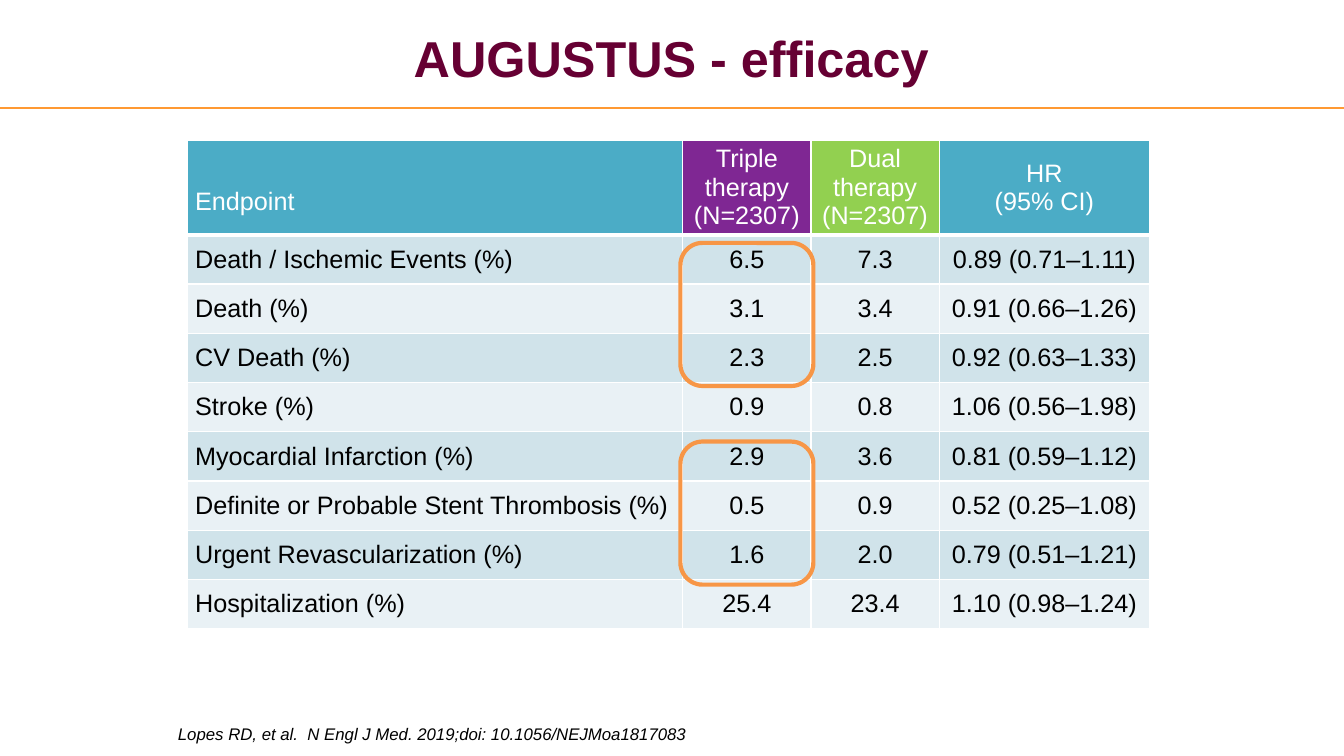
from dataclasses import dataclass

from lxml import etree
from pptx import Presentation
from pptx.dml.color import RGBColor
from pptx.enum.shapes import MSO_CONNECTOR, MSO_SHAPE
from pptx.enum.text import MSO_ANCHOR as Anchor, MSO_AUTO_SIZE as AutoSize, PP_ALIGN as Align
from pptx.oxml.ns import qn
from pptx.util import Pt


@dataclass(frozen=True)
class Theme:
    font: str = "Arial"
    title: str = "660033"
    rule: str = "FF9933"
    highlight: str = "F79646"
    header: str = "4BACC6"
    triple: str = "7F2793"
    dual: str = "92D050"
    bands: tuple = ("D0E3EA", "E9F1F5")
    light: str = "FFFFFF"
    dark: str = "000000"
    title_size: int = 36
    table_size: int = 18
    citation_size: int = 12


theme = Theme()


def format_text(frame, frame_format, align, size, color, bold=False, italic=False):
    """Apply frame settings, alignment and one font to all paragraphs."""
    for name, value in frame_format.items():
        setattr(frame, name, value)
    font_format = {"name": theme.font, "size": Pt(size), "bold": bold, "italic": italic}
    for paragraph in frame.paragraphs:
        paragraph.alignment = align
        for run in paragraph.runs:
            for name, value in font_format.items():
                setattr(run.font, name, value)
            run.font.color.rgb = RGBColor.from_string(color)


def add_cell_borders(cell, bottom_width):
    properties = cell._tc.get_or_add_tcPr()
    for side, width in (("L", 1), ("R", 1), ("T", 1), ("B", bottom_width)):
        border = etree.SubElement(properties, qn(f"a:ln{side}"), w=str(Pt(width)))
        fill = etree.SubElement(border, qn("a:solidFill"))
        etree.SubElement(fill, qn("a:srgbClr"), val=theme.light)


deck = Presentation()
deck.slide_width, deck.slide_height = Pt(960), Pt(540)
slide = deck.slides.add_slide(deck.slide_layouts[5])

# Title and rule
rule = slide.shapes.add_connector(MSO_CONNECTOR.STRAIGHT, 0, Pt(77), Pt(960), Pt(77))
rule.line.color.rgb = RGBColor.from_string(theme.rule)
rule.line.width = Pt(1.5)
etree.SubElement(rule._element.spPr, qn("a:effectLst"))

title = slide.shapes.title
title.left, title.top, title.width, title.height = Pt(153.5), Pt(16), Pt(652), Pt(44.5)
title.text_frame.text = "AUGUSTUS - efficacy"
title_format = {
    "vertical_anchor": Anchor.MIDDLE, "word_wrap": True, "auto_size": AutoSize.NONE,
    "margin_left": 0, "margin_top": Pt(8), "margin_right": 0, "margin_bottom": Pt(3),
}
format_text(title.text_frame, title_format, Align.CENTER, theme.title_size, theme.title, bold=True)

# Efficacy table
headings = ["Endpoint", "Triple therapy\n(N=2307)", "Dual therapy\n(N=2307)", "HR\v(95% CI)"]
heading_fills = [theme.header, theme.triple, theme.dual, theme.header]
endpoints = [
    ("Death / Ischemic Events (%)", "6.5", "7.3", "0.89 (0.71–1.11)"),
    ("Death (%)", "3.1", "3.4", "0.91 (0.66–1.26)"),
    ("CV Death (%)", "2.3", "2.5", "0.92 (0.63–1.33)"),
    ("Stroke (%)", "0.9", "0.8", "1.06 (0.56–1.98)"),
    ("Myocardial Infarction (%)", "2.9", "3.6", "0.81 (0.59–1.12)"),
    ("Definite or Probable Stent Thrombosis (%)", "0.5", "0.9", "0.52 (0.25–1.08)"),
    ("Urgent Revascularization (%)", "1.6", "2.0", "0.79 (0.51–1.21)"),
    ("Hospitalization (%)", "25.4", "23.4", "1.10 (0.98–1.24)"),
]
column_widths = [353.7, 91.6, 91.6, 150.3]
header_height, row_height = 67.2, 35.2
rows = [headings, *endpoints]
efficacy = slide.shapes.add_table(
    len(rows), len(headings), Pt(134), Pt(100),
    Pt(sum(column_widths)), Pt(header_height + row_height * len(endpoints)),
).table
for column, width in zip(efficacy.columns, column_widths):
    column.width = Pt(width)

for row_index, row in enumerate(rows):
    is_header = row_index == 0
    efficacy.rows[row_index].height = Pt(header_height if is_header else row_height)
    fills = heading_fills if is_header else [theme.bands[(row_index - 1) % 2]] * len(row)
    for column_index, (text, fill) in enumerate(zip(row, fills)):
        cell = efficacy.cell(row_index, column_index)
        cell.text = text
        add_cell_borders(cell, 3 if is_header else 1)
        cell.fill.solid()
        cell.fill.fore_color.rgb = RGBColor.from_string(fill)
        cell_format = {
            "vertical_anchor": Anchor.MIDDLE, "margin_left": Pt(5.4), "margin_right": Pt(5.4),
            "margin_top": Pt(3.6), "margin_bottom": Pt(3.6),
        }
        for name, value in cell_format.items():
            setattr(cell, name, value)
        format_text(
            cell.text_frame, {}, Align.CENTER if column_index else Align.LEFT,
            theme.table_size, theme.light if is_header else theme.dark,
        )
efficacy.cell(0, 0).margin_top = Pt(24.3)

# Citation
citation = slide.shapes.add_textbox(Pt(120), Pt(513.5), Pt(553), Pt(21.6)).text_frame
citation.text = "Lopes RD, et al.  N Engl J Med. 2019;doi: 10.1056/NEJMoa1817083"
citation_format = {"word_wrap": True, "auto_size": AutoSize.SHAPE_TO_FIT_TEXT}
format_text(citation, citation_format, Align.LEFT, theme.citation_size, theme.dark, italic=True)

# Highlighted triple therapy results
for top in (173.5, 315.4):
    highlight = slide.shapes.add_shape(
        MSO_SHAPE.ROUNDED_RECTANGLE, Pt(486), Pt(top), Pt(95), Pt(102.2)
    )
    highlight.shadow.inherit = False
    highlight.fill.background()
    highlight.line.color.rgb = RGBColor.from_string(theme.highlight)
    highlight.line.width = Pt(3)

deck.save("out.pptx")
